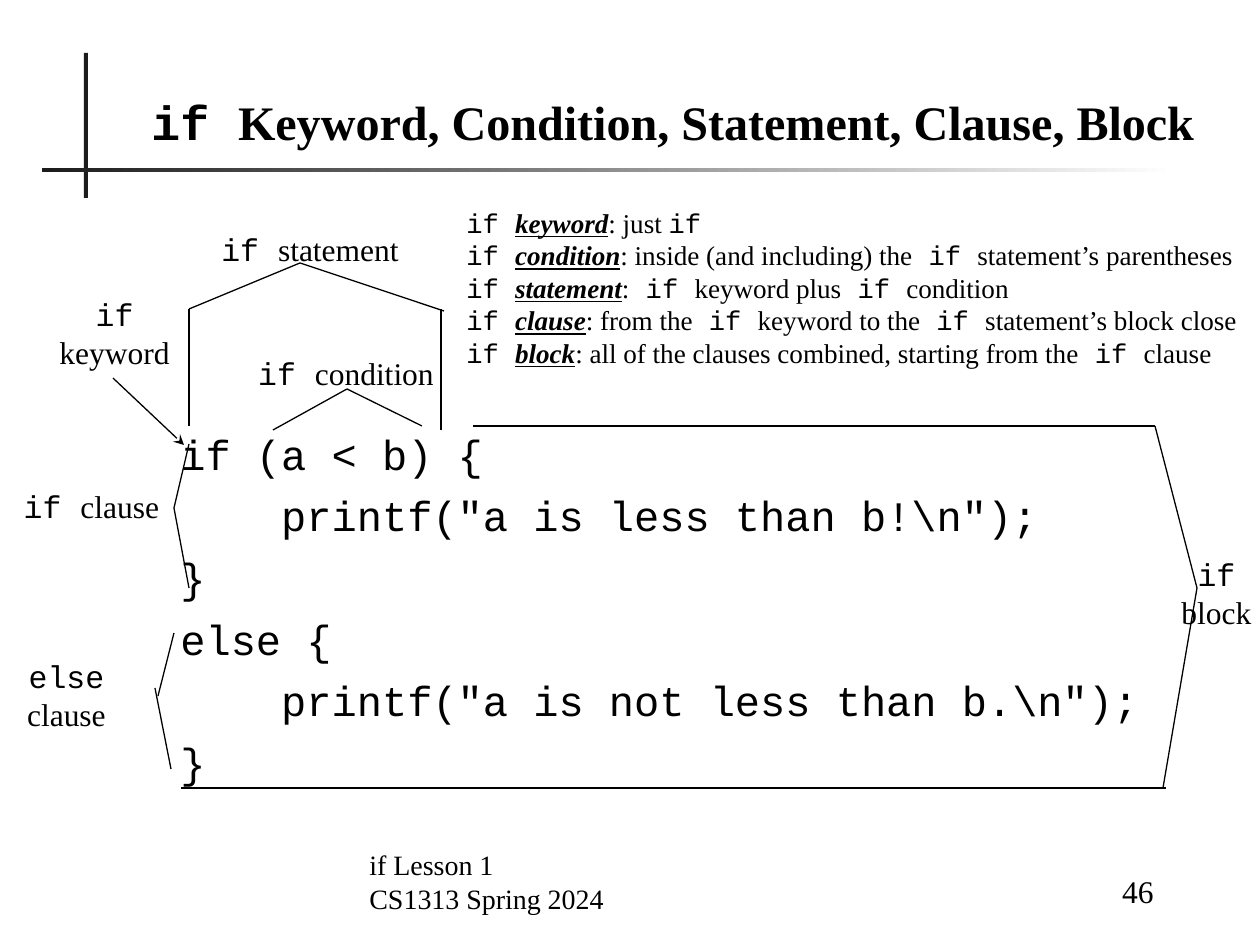
from dataclasses import dataclass

from lxml.etree import SubElement
from pptx import Presentation
from pptx.dml.color import RGBColor
from pptx.enum.shapes import MSO_CONNECTOR, MSO_SHAPE
from pptx.enum.text import MSO_ANCHOR as ANCHOR, PP_ALIGN as ALIGN
from pptx.oxml.ns import qn
from pptx.util import Pt


@dataclass(frozen=True)
class Theme:
    ink = RGBColor(0, 0, 0)
    bar = RGBColor(0x1C, 0x1C, 0x1C)
    paper = RGBColor(255, 255, 255)
    serif = "Times New Roman"
    mono = "Courier New"
    title = 27.5
    code = 24
    label = 18
    note = 15.5
    footer = 16
    line = 0.75
    code_gap = 6.4


T = Theme()
PX = 914400 / 126  # EMU in one px

# Content: a run is (text, style), where m = mono, b = bold, k = key term
IF = ("if ", "m")
MID_IF = (" if ", "m")
TITLE = [[("if ", "mb"), ("Keyword, Condition, Statement, Clause, Block", "b")]]
CODE = [
    "if (a < b) {",
    '    printf("a is less than b!\\n");',
    "}",
    "else {",
    '    printf("a is not less than b.\\n");',
    "}",
]
NOTES = [
    ("keyword", [(": just ", ""), ("if", "m")]),
    ("condition", [(": inside (and including) the", ""), MID_IF,
                   ("statement’s parentheses", "")]),
    ("statement", [(":", ""), MID_IF, ("keyword plus", ""), MID_IF,
                   ("condition", "")]),
    ("clause", [(": from the", ""), MID_IF, ("keyword to the", ""), MID_IF,
                ("statement’s block close", "")]),
    ("block", [(": all of the clauses combined, starting from the", ""),
               MID_IF, ("clause", "")]),
]
FOOTER = [[("if Lesson 1", "")], [("CS1313 Spring 2024", "")]]
PAGE = [[("46", "")]]
LABELS = [  # box, paragraphs
    ((1168, 549, 97, 89), [[IF, ("block", "")]]),
    ((204, 348, 284, 50), [[IF, ("condition", "")]]),
    ((23, 289, 183, 89), [[IF, ("keyword", "")]]),
    ((9, 481, 165, 50), [[IF, ("clause", "")]]),
    ((-16, 651, 165, 89), [[("else", "m")], [("clause", "")]]),
    ((168, 224, 284, 50), [[IF, ("statement", "")]]),
]
BRACKETS = [  # each is a chain of points
    [(273, 430), (347, 389), (422, 426)],                # condition
    [(189, 426), (189, 309), (300, 263), (444, 311)],    # statement
    [(441, 430), (441, 309)],                            # statement, right side
    [(189, 444), (174, 508), (189, 588)],                # if clause
    [(174, 633), (158, 696)],                            # else clause, top
    [(155, 688), (171, 769)],                            # else clause, bottom
    [(473, 426), (1155, 426), (1197, 588), (1163, 788)], # block
    [(181, 788), (1166, 788)],                           # block, bottom
]
KEYWORD_ARROW = (113, 378), (184, 445)


def px(*values):
    return [round(v * PX) for v in values]


def add_text(s, box, paras, size, align=ALIGN.LEFT, anchor=ANCHOR.TOP,
             wrap=True, gap=0):
    tf = s.shapes.add_textbox(*px(*box)).text_frame
    tf.word_wrap, tf.vertical_anchor = wrap, anchor
    for i, runs in enumerate(paras):
        p = tf.paragraphs[0] if i == 0 else tf.add_paragraph()
        p.alignment = align
        if i and gap:
            p.space_before = Pt(gap)
        for text, style in runs:
            r = p.add_run()
            r.text = text
            f = r.font
            f.name = T.mono if "m" in style else T.serif
            f.size, f.color.rgb = Pt(size), T.ink
            if "b" in style or "k" in style:
                f.bold = True
            if "k" in style:
                f.italic = f.underline = True


def add_line(s, start, end, arrow=False):
    c = s.shapes.add_connector(MSO_CONNECTOR.STRAIGHT, *px(*start, *end))
    c.line.color.rgb, c.line.width = T.ink, Pt(T.line)
    if arrow:
        SubElement(c.line._get_or_add_ln(), qn("a:tailEnd"), type="stealth")
    SubElement(c._element.spPr, qn("a:effectLst"))


def add_bar(s, box, fade=False):
    sp = s.shapes.add_shape(MSO_SHAPE.RECTANGLE, *px(*box))
    sp.shadow.inherit = False
    sp.line.fill.background()
    if fade:
        sp.fill.gradient()
        sp.fill.gradient_angle = 0
        for stop, colour, at in zip(sp.fill.gradient_stops,
                                    (T.bar, T.paper), (0, 1)):
            stop.color.rgb, stop.position = colour, at
    else:
        sp.fill.solid()
        sp.fill.fore_color.rgb = T.bar


def main():
    prs = Presentation()
    prs.slide_width, prs.slide_height = px(1260, 945)
    s = prs.slides.add_slide(prs.slide_layouts[6])

    # Title and its crossed bars
    add_bar(s, (84, 53, 4, 145))
    add_bar(s, (42, 168, 1134, 4), fade=True)
    add_text(s, (136, 63, 1074, 93), TITLE, T.title, ALIGN.CENTER, ANCHOR.BOTTOM)

    # Code
    add_text(s, (168, 422, 1008, 397), [[(line, "m")] for line in CODE],
             T.code, gap=T.code_gap)

    # Footer and page number
    add_text(s, (357, 858, 609, 63), FOOTER, T.footer, anchor=ANCHOR.BOTTOM)
    add_text(s, (987, 853, 179, 63), PAGE, T.label, ALIGN.RIGHT, ANCHOR.BOTTOM)

    # Brackets, arrow and labels
    for points in BRACKETS:
        for start, end in zip(points, points[1:]):
            add_line(s, start, end)
    add_line(s, *KEYWORD_ARROW, arrow=True)
    for box, paras in LABELS:
        add_text(s, box, paras, T.label, ALIGN.CENTER)

    # Definitions
    add_text(s, (454, 200, 796, 178),
             [[IF, (term, "k"), *rest] for term, rest in NOTES],
             T.note, wrap=False)

    prs.save("out.pptx")


if __name__ == "__main__":
    main()
